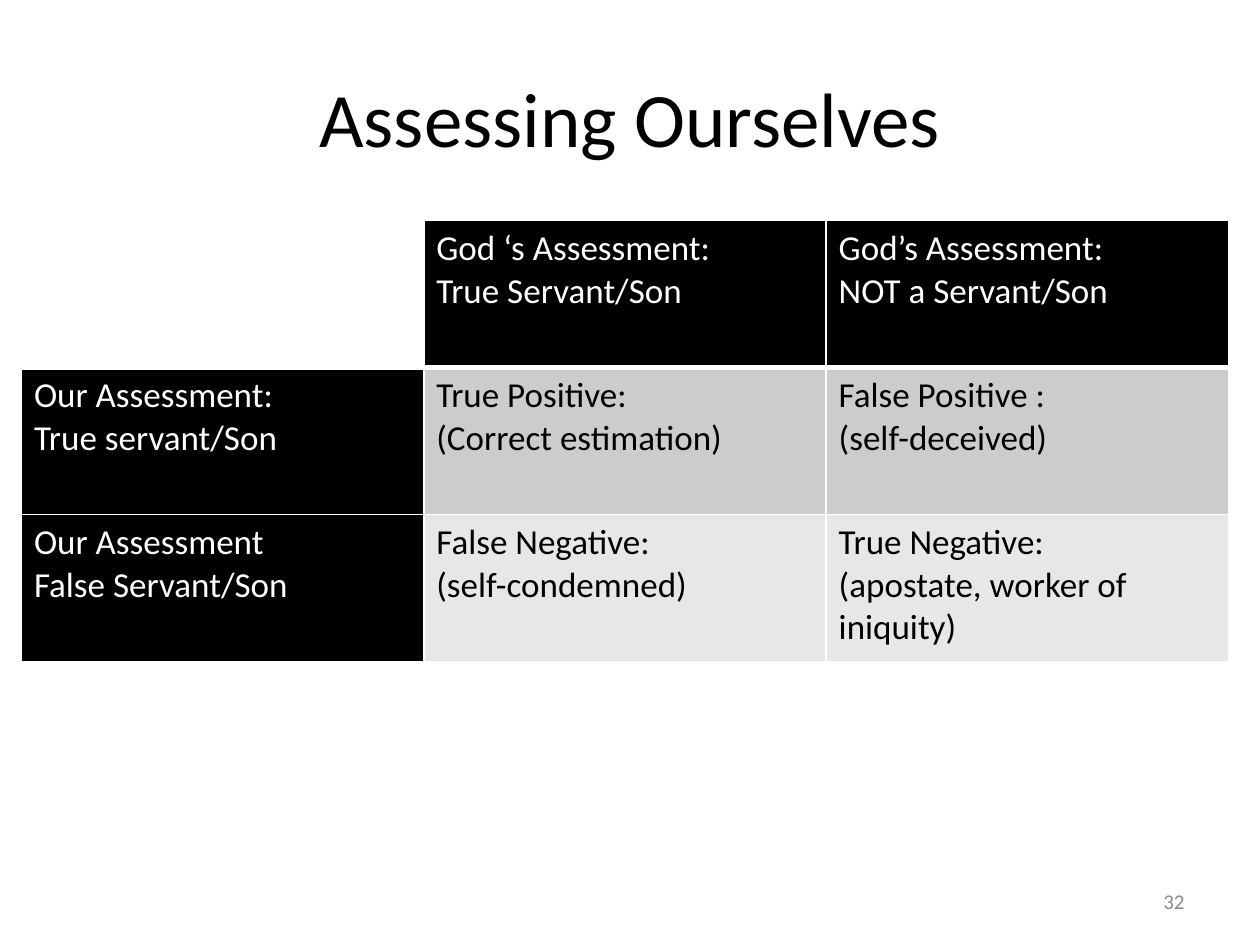
from lxml.etree import SubElement
from pptx import Presentation
from pptx.dml.color import RGBColor
from pptx.enum.text import MSO_ANCHOR, PP_ALIGN
from pptx.oxml.ns import qn
from pptx.util import Inches, Pt

BLACK, WHITE = "000000", "FFFFFF"
MID_GRAY, LIGHT_GRAY, NUMBER_GRAY = "CCCCCC", "E7E7E7", "8C8C8C"

# Each row: cell text, with the fill of its body cells
ROWS = [
    (["", "God ‘s Assessment:\nTrue Servant/Son",
      "God’s Assessment:\nNOT a Servant/Son"], BLACK),
    (["Our Assessment:\nTrue servant/Son", "True Positive:\n(Correct estimation)",
      "False Positive :\n(self-deceived)"], MID_GRAY),
    (["Our Assessment\nFalse Servant/Son", "False Negative:\n(self-condemned)",
      "True Negative:\n(apostate, worker of iniquity)"], LIGHT_GRAY),
]


def rgb(color):
    return RGBColor.from_string(color)


def write(tf, text, size=20, color=BLACK, align=PP_ALIGN.LEFT):
    tf.word_wrap = True
    for i, line in enumerate(text.split("\n")):
        p = tf.paragraphs[0] if i == 0 else tf.add_paragraph()
        p.alignment = align
        p.font.size = Pt(size)
        if line:
            r = p.add_run()
            r.text = line
            r.font.name = "Calibri"
            r.font.size = Pt(size)
            r.font.color.rgb = rgb(color)


def add_text(s, text, left, top, width, height, **fmt):
    sp = s.shapes.add_textbox(Inches(left), Inches(top), Inches(width), Inches(height))
    sp.text_frame.vertical_anchor = MSO_ANCHOR.MIDDLE
    write(sp.text_frame, text, **fmt)


def set_borders(cell, bottom=1):
    tcPr = cell._tc.get_or_add_tcPr()
    for side, width in (("L", 1), ("R", 1), ("T", 1), ("B", bottom)):
        ln = SubElement(tcPr, qn(f"a:ln{side}"), w=str(Pt(width)))
        SubElement(SubElement(ln, qn("a:solidFill")), qn("a:srgbClr"), val=WHITE)


def add_assessment_table(s, left, top, width, height):
    table = s.shapes.add_table(len(ROWS), len(ROWS[0][0]), Inches(left), Inches(top),
                               Inches(width), Inches(height)).table
    for i, (texts, body_fill) in enumerate(ROWS):
        for j, text in enumerate(texts):
            cell = table.cell(i, j)
            fill = BLACK if j == 0 else body_fill
            if not text:
                fill = WHITE
            set_borders(cell, bottom=3 if i == 0 else 1)
            cell.fill.solid()
            cell.fill.fore_color.rgb = rgb(fill)
            write(cell.text_frame, text, color=WHITE if fill == BLACK else BLACK)


def main():
    prs = Presentation()
    prs.slide_width, prs.slide_height = Inches(10), Inches(7.5)
    s = prs.slides.add_slide(prs.slide_layouts[6])

    # Title
    add_text(s, "Assessing Ourselves", 0.5, 0.3, 9, 1.25, size=44, align=PP_ALIGN.CENTER)
    # Assessment matrix
    add_assessment_table(s, 0.17, 1.75, 9.58, 3.5)
    # Slide number
    add_text(s, "32", 7.17, 6.95, 2.33, 0.4, size=12, color=NUMBER_GRAY,
             align=PP_ALIGN.RIGHT)

    prs.save("out.pptx")


if __name__ == "__main__":
    main()
